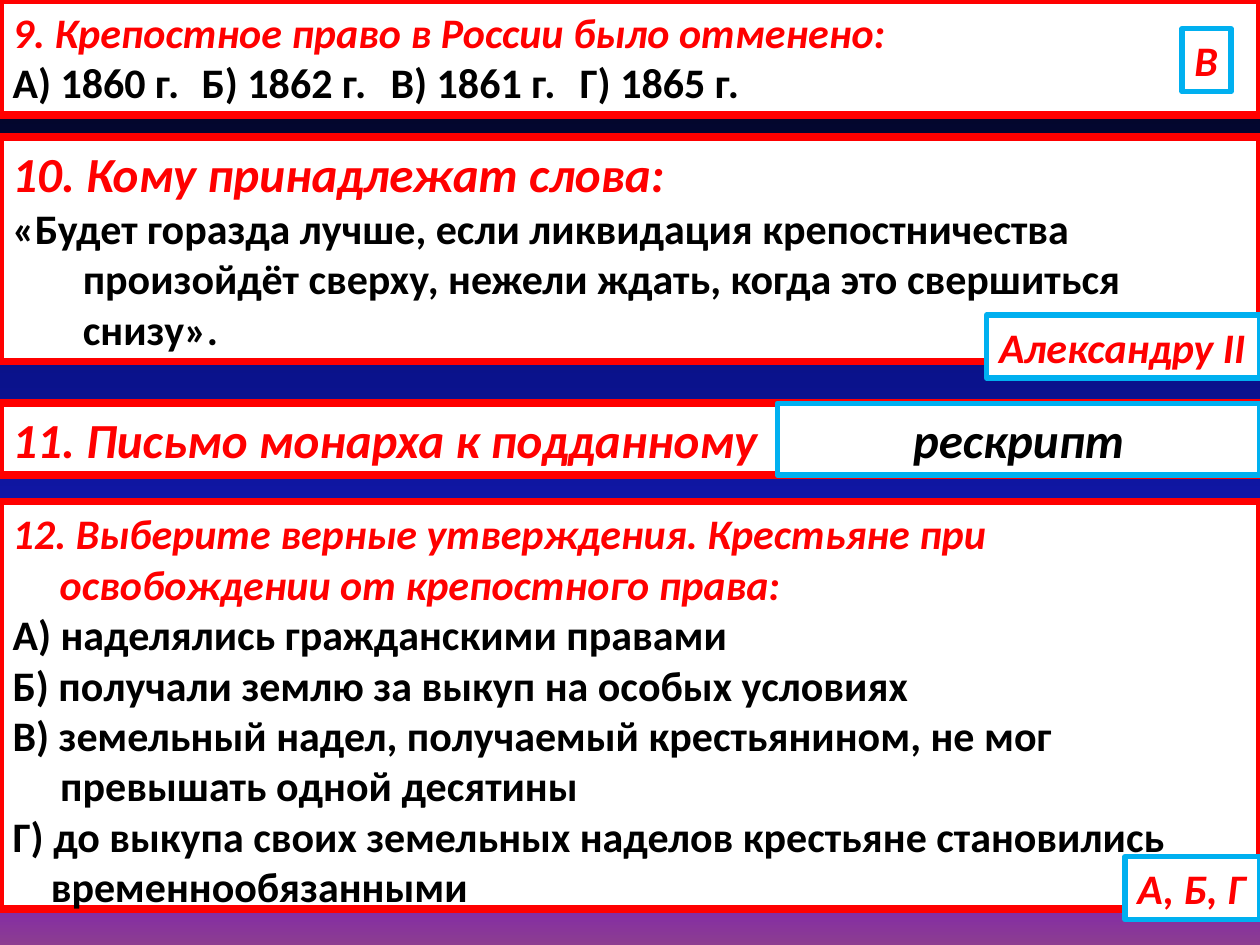
"""Build a quiz slide on the abolition of serfdom with the answers beside the questions."""
from dataclasses import dataclass
from typing import Optional

from lxml import etree
from pptx import Presentation
from pptx.dml.color import RGBColor
from pptx.enum.shapes import MSO_SHAPE
from pptx.enum.text import MSO_ANCHOR, MSO_AUTO_SIZE, PP_ALIGN
from pptx.oxml.ns import qn
from pptx.util import Cm, Pt

RECT = MSO_SHAPE.RECTANGLE
TOP = MSO_ANCHOR.TOP
GROW = MSO_AUTO_SIZE.SHAPE_TO_FIT_TEXT
LEFT, CENTER = PP_ALIGN.LEFT, PP_ALIGN.CENTER

FONT = "Calibri"
RED, BLUE, BLACK, WHITE = "FF0000", "00B0F0", "000000", "FFFFFF"
WIDTH, HEIGHT = 25.4, 19.05
HEAD_INDENT, TEXT_INDENT = 0.95, 1.42
TAB_STEP = 6.2
GRADIENT = ((0, "000000"), (40, "0A128C"), (70, "181CC7"), (88, "7005D4"), (100, "8C3D91"))


@dataclass
class Line:
    text: str
    size: int = 24
    color: str = BLACK
    italic: bool = False
    margin: float = TEXT_INDENT
    indent: float = -TEXT_INDENT
    align: PP_ALIGN = LEFT
    tabs: int = 0


@dataclass
class Box:
    left: float
    top: float
    width: float
    height: float
    lines: list[Line]
    border: str = RED
    border_width: float = 4.5
    wrap: bool = True
    holder: Optional[int] = None


def heading(text: str, size: int = 24) -> Line:
    return Line(text, size, RED, True, HEAD_INDENT, -HEAD_INDENT)


def continuation(text: str, margin: float) -> Line:
    return Line(text, margin=margin, indent=0)


def answer(left: float, top: float, width: float, text: str) -> Box:
    line = Line(text, color=RED, italic=True, margin=0, indent=0)
    return Box(left, top, width, 1.27, [line], BLUE, 3, False)


BOXES = [
    Box(0, 0, WIDTH, 2.31, [
        heading("9. Крепостное право в России было отменено:"),
        Line("А) 1860 г.\tБ) 1862 г.\tВ) 1861 г.\tГ) 1865 г.", margin=0, indent=0, tabs=3),
    ], holder=0),
    answer(23.83, 0.58, 0.99, "В"),
    Box(0, 2.77, WIDTH, 4.52, [
        heading("10. Кому принадлежат слова:", 28),
        Line("«Будет горазда лучше, если ликвидация крепостничества произойдёт сверху, "
             "нежели ждать, когда это свершиться снизу»."),
    ]),
    answer(19.89, 6.35, 5.51, "Александру II"),
    Box(0, 8.13, WIDTH, 1.45, [heading("11. Письмо монарха к подданному", 28)]),
    Box(15.67, 8.13, 9.73, 1.45,
        [Line("рескрипт", 28, italic=True, margin=0, indent=0, align=CENTER)], BLUE, 3),
    Box(0, 10.11, WIDTH, 8.46, [
        heading("12. Выберите верные утверждения. Крестьяне при освобождении "
                "от крепостного права:"),
        Line("А) наделялись гражданскими правами"),
        Line("Б) получали землю за выкуп на особых условиях"),
        Line("В) земельный надел, получаемый крестьянином, не мог"),
        continuation("превышать одной десятины", 0.96),
        Line("Г) до выкупа своих земельных наделов крестьяне становились"),
        continuation("временнообязанными", 0.77),
    ], holder=1),
    answer(22.68, 17.27, 2.72, "А, Б, Г"),
]


def rgb(value: str) -> RGBColor:
    return RGBColor.from_string(value)


def paint_background(s) -> None:
    fill = s.background.fill
    fill.gradient()
    fill.gradient_angle = 270
    stops = s.element.find(".//" + qn("a:gsLst"))
    for stop in list(stops):
        stops.remove(stop)
    for position, color in GRADIENT:
        stop = etree.SubElement(stops, qn("a:gs"), pos=str(position * 1000))
        etree.SubElement(stop, qn("a:srgbClr"), val=color)


def write_line(p, line: Line) -> None:
    p.alignment = line.align
    p.line_spacing = 1.0
    p.space_before = p.space_after = Pt(0)
    pPr = p._p.get_or_add_pPr()
    pPr.set("marL", str(Cm(line.margin)))
    pPr.set("indent", str(Cm(line.indent)))
    etree.SubElement(pPr, qn("a:buNone"))
    if line.tabs:
        tab_list = etree.SubElement(pPr, qn("a:tabLst"))
        for i in range(1, line.tabs + 1):
            etree.SubElement(tab_list, qn("a:tab"), pos=str(Cm(TAB_STEP * i)), algn="l")
    r = p.add_run()
    r.text = line.text
    r.font.name = FONT
    r.font.size = Pt(line.size)
    r.font.bold = True
    r.font.italic = line.italic
    r.font.color.rgb = rgb(line.color)


def draw_box(s, box: Box) -> None:
    place = [Cm(v) for v in (box.left, box.top, box.width, box.height)]
    if box.holder is None:
        sp = s.shapes.add_shape(RECT, *place)
        sp.shadow.inherit = False
    else:
        sp = s.placeholders[box.holder]
        sp.left, sp.top, sp.width, sp.height = place
    sp.fill.solid()
    sp.fill.fore_color.rgb = rgb(WHITE)
    sp.line.color.rgb = rgb(box.border)
    sp.line.width = Pt(box.border_width)
    tf = sp.text_frame
    tf.word_wrap = box.wrap
    tf.auto_size = GROW
    tf.vertical_anchor = TOP
    for i, line in enumerate(box.lines):
        write_line(tf.add_paragraph() if i else tf.paragraphs[0], line)


def main() -> None:
    prs = Presentation()
    prs.slide_width, prs.slide_height = Cm(WIDTH), Cm(HEIGHT)
    s = prs.slides.add_slide(prs.slide_layouts[1])
    paint_background(s)
    for box in BOXES:
        draw_box(s, box)
    prs.save("out.pptx")


if __name__ == "__main__":
    main()
